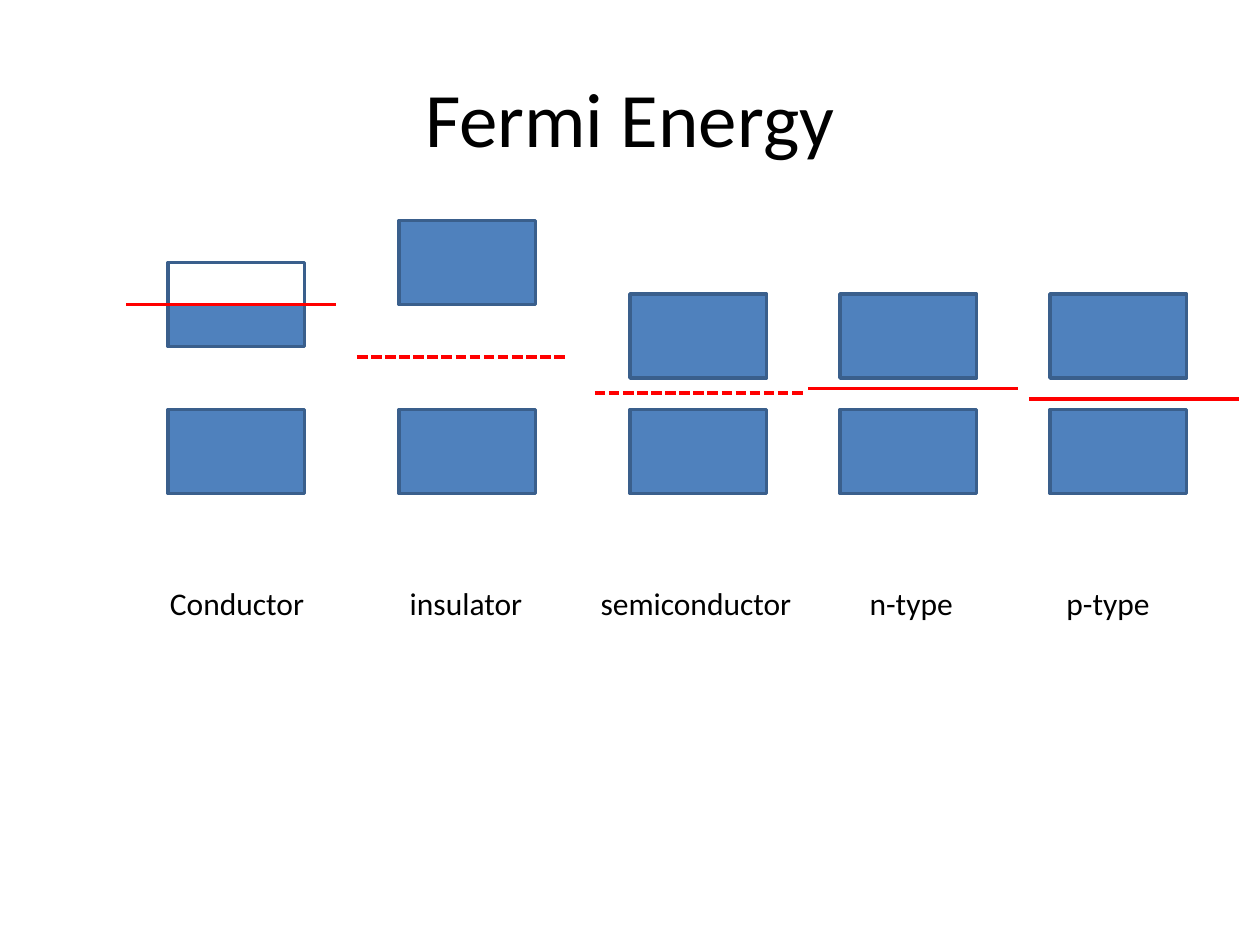
from lxml import etree
from pptx import Presentation
from pptx.dml.color import RGBColor
from pptx.enum.dml import MSO_LINE
from pptx.enum.shapes import MSO_CONNECTOR, MSO_SHAPE
from pptx.enum.text import MSO_ANCHOR, PP_ALIGN
from pptx.oxml.ns import qn
from pptx.util import Inches, Pt

RECTANGLE = MSO_SHAPE.RECTANGLE
STRAIGHT = MSO_CONNECTOR.STRAIGHT
DASHED = MSO_LINE.SQUARE_DOT
CENTER, LEFT = PP_ALIGN.CENTER, PP_ALIGN.LEFT
MIDDLE = MSO_ANCHOR.MIDDLE

CELLS_PER_INCH = 12
BAND_WIDTH, BAND_HEIGHT = 13, 8
VALENCE_TOP = 39
FERMI_WIDTH = 20
LABELS_LEFT, LABELS_TOP, LABELS_WIDTH, LABELS_HEIGHT = 15, 55, 97.3, 4.8
LABELS_INSET = 1.2
LINE_WIDTH = 2
BLUE, DARK_BLUE, RED, BLACK = "4F81BD", "3A5F8C", "FF0000", "000000"

MATERIALS = [
    {"name": "Conductor", "left": 16, "upper": 25, "fermi": (12, 29),
     "label_center": 22.5, "half_filled": True},
    {"name": "insulator", "left": 38, "upper": 21, "fermi": (34, 34),
     "label_center": 44.4, "dashed": True},
    {"name": "semiconductor", "left": 60, "upper": 28, "fermi": (56.65, 37.45),
     "label_center": 66.3, "dashed": True},
    {"name": "n-type", "left": 80, "upper": 28, "fermi": (77, 37),
     "label_center": 86.8},
    {"name": "p-type", "left": 100, "upper": 28, "fermi": (98, 38),
     "label_center": 105.55},
]


def color(value):
    return RGBColor.from_string(value)


def cells(*counts):
    return [Inches(count / CELLS_PER_INCH) for count in counts]


def write_text(shape, text, size, alignment):
    frame = shape.text_frame
    frame.text = text
    paragraph = frame.paragraphs[0]
    paragraph.alignment = alignment
    font = paragraph.runs[0].font
    for name, value in {"name": "Calibri", "size": Pt(size)}.items():
        setattr(font, name, value)
    font.color.rgb = color(BLACK)
    return paragraph


def set_title(slide, text):
    title = slide.shapes.title
    place = {"left": 0.5, "top": 0.3, "width": 9, "height": 1.25}
    for name, value in place.items():
        setattr(title, name, Inches(value))
    write_text(title, text, 44, CENTER)
    title.text_frame.vertical_anchor = MIDDLE


def add_band(slide, left, top, height=BAND_HEIGHT, filled=True):
    band = slide.shapes.add_shape(
        RECTANGLE, *cells(left, top, BAND_WIDTH, height))
    band.shadow.inherit = False
    if filled:
        band.fill.solid()
        band.fill.fore_color.rgb = color(BLUE)
    else:
        band.fill.background()
    band.line.color.rgb = color(DARK_BLUE)
    band.line.width = Pt(LINE_WIDTH)


def add_bands(slide, material):
    left, upper = material["left"], material["upper"]
    add_band(slide, left, VALENCE_TOP)
    if material.get("half_filled"):
        half = BAND_HEIGHT / 2
        add_band(slide, left, upper + half, half)
        add_band(slide, left, upper, half, filled=False)
    else:
        add_band(slide, left, upper)


def add_fermi_level(slide, left, level, dashed):
    connector = slide.shapes.add_connector(
        STRAIGHT, *cells(left, level, left + FERMI_WIDTH, level))
    connector.line.color.rgb = color(RED)
    connector.line.width = Pt(LINE_WIDTH)
    if dashed:
        connector.line.dash_style = DASHED
    etree.SubElement(connector._element.spPr, qn("a:effectLst"))


def add_center_tabs(paragraph, positions):
    properties = paragraph._p.get_or_add_pPr()
    tab_list = etree.SubElement(properties, qn("a:tabLst"))
    for position in cells(*positions):
        etree.SubElement(tab_list, qn("a:tab"), pos=str(position), algn="ctr")


def add_labels(slide, materials):
    labels = slide.shapes.add_textbox(
        *cells(LABELS_LEFT, LABELS_TOP, LABELS_WIDTH, LABELS_HEIGHT))
    labels.text_frame.word_wrap = True
    text = "\t".join(material["name"] for material in materials)
    paragraph = write_text(labels, text, 18, LEFT)
    text_left = LABELS_LEFT + LABELS_INSET
    add_center_tabs(paragraph, [material["label_center"] - text_left
                                for material in materials[1:]])


def main():
    presentation = Presentation()
    presentation.slide_width = Inches(10)
    presentation.slide_height = Inches(7.5)
    slide = presentation.slides.add_slide(presentation.slide_layouts[5])
    set_title(slide, "Fermi Energy")
    for material in MATERIALS:
        add_bands(slide, material)
    add_labels(slide, MATERIALS)
    for material in MATERIALS:
        add_fermi_level(slide, *material["fermi"], material.get("dashed"))
    presentation.save("out.pptx")


if __name__ == "__main__":
    main()
